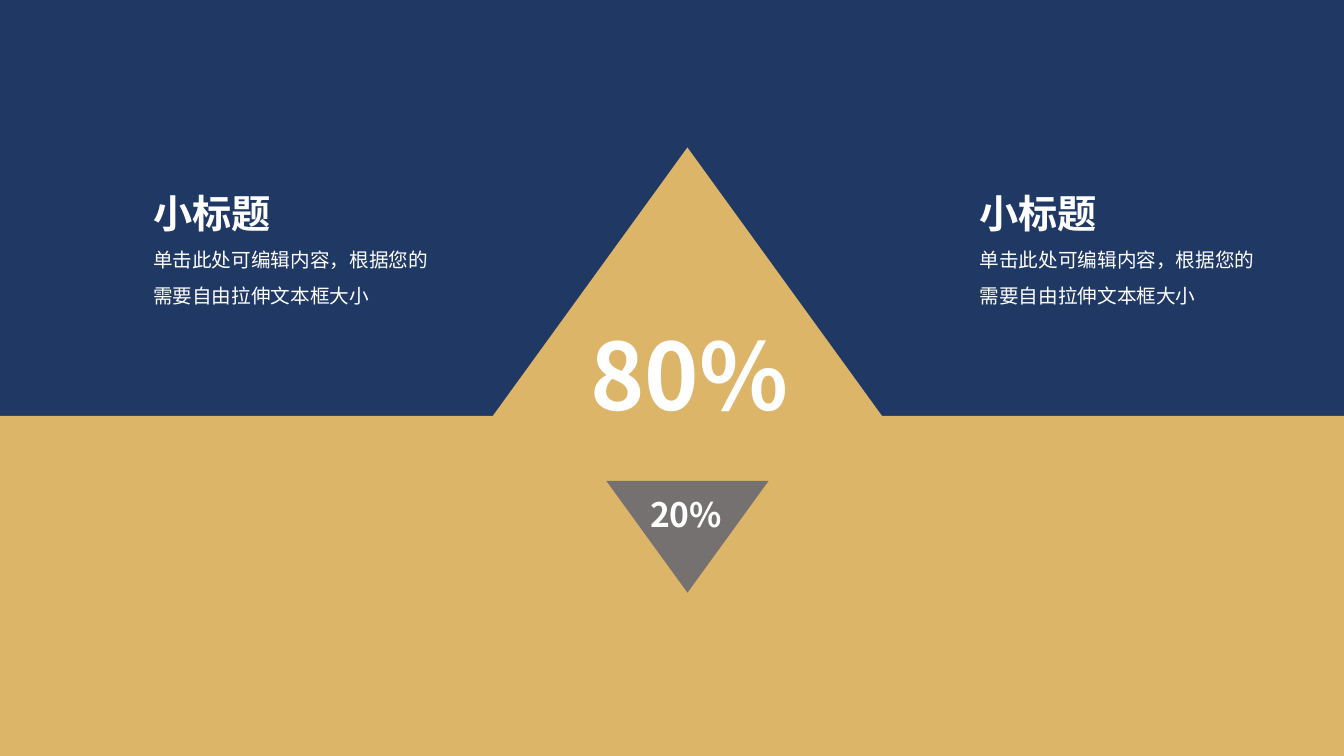
from dataclasses import dataclass

from lxml.etree import SubElement
from pptx import Presentation
from pptx.dml.color import RGBColor
from pptx.enum.shapes import MSO_AUTO_SHAPE_TYPE as ShapeType
from pptx.enum.text import MSO_AUTO_SIZE as AutoSize
from pptx.oxml.ns import qn
from pptx.slide import Slide
from pptx.text.text import _Paragraph as Paragraph
from pptx.util import Inches, Pt

SLIDE_WIDTH = Inches(13.333)
SLIDE_HEIGHT = Inches(7.5)


@dataclass(frozen=True)
class Theme:
    navy: RGBColor = RGBColor.from_string("203864")
    gold: RGBColor = RGBColor.from_string("DCB569")
    gray: RGBColor = RGBColor.from_string("767171")
    white: RGBColor = RGBColor.from_string("FFFFFF")
    font: str = "Noto Sans CJK SC"
    major_figure: int = 66
    heading: int = 28
    minor_figure: int = 24
    body: int = 14
    body_spacing: float = 1.5


THEME = Theme()


@dataclass(frozen=True)
class Area:
    """Percentages of the slide's width and height."""

    left: float
    top: float
    width: float
    height: float

    def lengths(self) -> tuple[int, int, int, int]:
        return (
            round(SLIDE_WIDTH * self.left / 100),
            round(SLIDE_HEIGHT * self.top / 100),
            round(SLIDE_WIDTH * self.width / 100),
            round(SLIDE_HEIGHT * self.height / 100),
        )


@dataclass(frozen=True)
class Block:
    kind: ShapeType
    area: Area
    color: RGBColor
    rotation: int = 0


@dataclass(frozen=True)
class Line:
    text: str
    size: int
    bold: bool = True
    spacing: float = 1.0


@dataclass(frozen=True)
class Label:
    area: Area
    lines: tuple[Line, ...]


HORIZON = 55
AXIS = 51.15


def centered(top: float, width: float, height: float) -> Area:
    return Area(AXIS - width / 2, top, width, height)


BLOCKS = (
    Block(ShapeType.RECTANGLE, Area(0, HORIZON, 100, 100 - HORIZON), THEME.gold),
    Block(ShapeType.ISOSCELES_TRIANGLE, centered(19.5, 28.95, HORIZON - 19.5), THEME.gold),
    Block(ShapeType.ISOSCELES_TRIANGLE, centered(63.6, 12.08, 14.8), THEME.gray, 180),
)

CALLOUT_LINES = (
    Line("小标题", THEME.heading),
    Line("单击此处可编辑内容，根据您的需要自由拉伸文本框大小", THEME.body, False, THEME.body_spacing),
)

LABELS = (
    Label(Area(43.2, 41.47, 17.25, 16.13), (Line("80%", THEME.major_figure),)),
    Label(Area(47.63, 64.67, 7.05, 6.8), (Line("20%", THEME.minor_figure),)),
    *(Label(Area(left, 24.4, 22.5, 17.07), CALLOUT_LINES) for left in (10.65, 72.15)),
)


def draw_block(slide: Slide, block: Block) -> None:
    shape = slide.shapes.add_shape(block.kind, *block.area.lengths())
    shape.rotation = block.rotation
    shape.shadow.inherit = False
    shape.fill.solid()
    shape.fill.fore_color.rgb = block.color
    shape.line.fill.background()


def write_line(paragraph: Paragraph, line: Line) -> None:
    paragraph.text = line.text
    paragraph.line_spacing = line.spacing
    font = paragraph.font
    font.size = Pt(line.size)
    font.bold = line.bold
    font.color.rgb = THEME.white
    font.name = THEME.font
    properties = paragraph._p.pPr.find(qn("a:defRPr"))
    SubElement(properties, qn("a:ea")).set("typeface", THEME.font)


def draw_label(slide: Slide, label: Label) -> None:
    frame = slide.shapes.add_textbox(*label.area.lengths()).text_frame
    frame.word_wrap = True
    frame.auto_size = AutoSize.SHAPE_TO_FIT_TEXT
    frame.margin_right = 0
    for index, line in enumerate(label.lines):
        paragraph = frame.add_paragraph() if index else frame.paragraphs[0]
        write_line(paragraph, line)


def main() -> None:
    presentation = Presentation()
    presentation.slide_width = SLIDE_WIDTH
    presentation.slide_height = SLIDE_HEIGHT
    slide = presentation.slides.add_slide(presentation.slide_layouts.get_by_name("Blank"))
    slide.background.fill.solid()
    slide.background.fill.fore_color.rgb = THEME.navy
    for block in BLOCKS:
        draw_block(slide, block)
    for label in LABELS:
        draw_label(slide, label)
    presentation.save("out.pptx")


if __name__ == "__main__":
    main()
